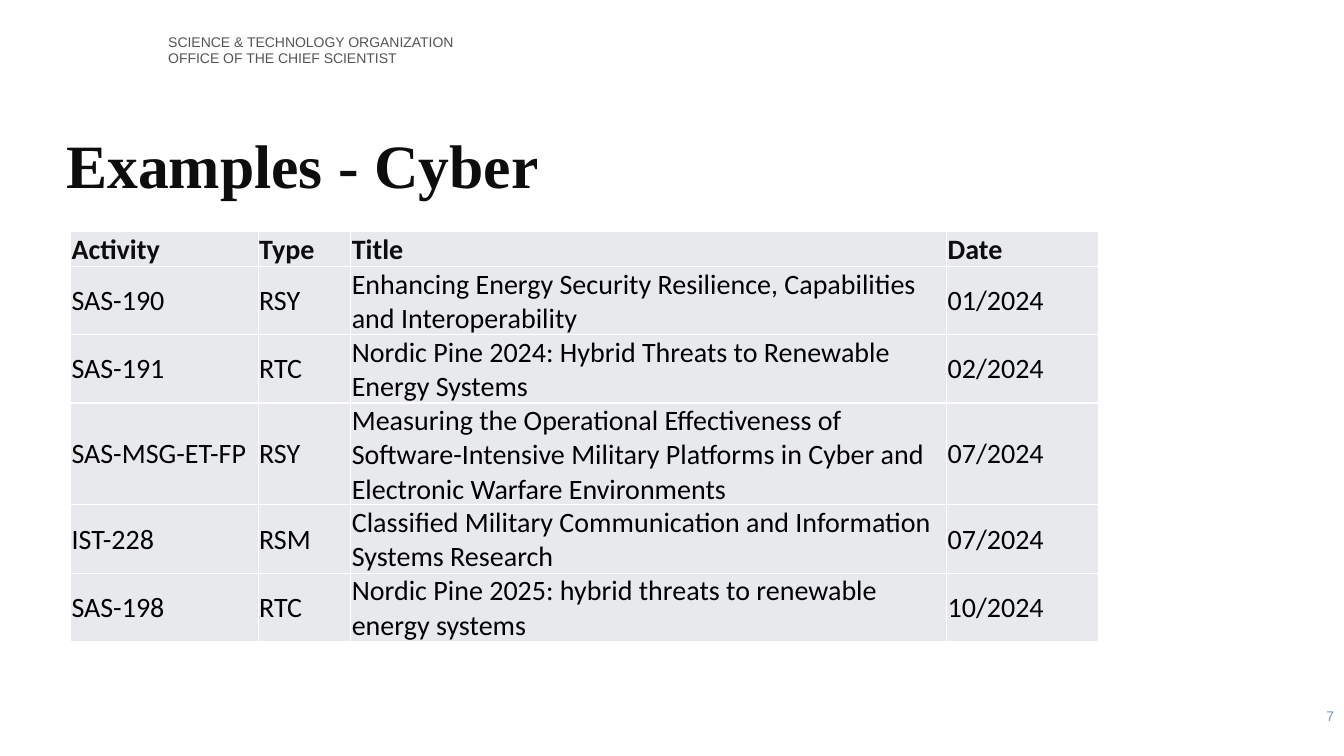
from dataclasses import dataclass

from lxml import etree
from pptx import Presentation, util as u
from pptx.dml.color import RGBColor
from pptx.enum import text
from pptx.oxml import ns

PX = u.Inches(1) // 100


@dataclass(frozen=True)
class Theme:
    ink: str = "0D0D0D"
    body: str = "000000"
    organization: str = "545454"
    page_number: str = "719AC1"
    cell: str = "E7E9ED"
    border: str = "FFFFFF"
    small: int = 10
    table: int = 20
    title: int = 44
    sans: str = "Arial"
    serif: str = "Times New Roman"
    table_font: str = "Calibri"


def write(frame, words, *, font, size, color, bold=False,
          align=text.PP_ALIGN.LEFT, line_spacing=None):
    """Fill a text frame, one paragraph for each line of words."""
    for index, line in enumerate(words.split("\n")):
        paragraph = frame.add_paragraph() if index else frame.paragraphs[0]
        paragraph.alignment = align
        if line_spacing:
            paragraph.line_spacing = line_spacing
        run = paragraph.add_run()
        run.text = line
        run.font.name = font
        run.font.size = u.Pt(size)
        run.font.bold = bold
        run.font.color.rgb = RGBColor.from_string(color)


class SlideBuilder:
    def __init__(self, slide, theme):
        self.slide = slide
        self.theme = theme

    def text_box(self, left, top, width, height, words, **style):
        box = self.slide.shapes.add_textbox(
            left * PX, top * PX, width * PX, height * PX)
        box.text_frame.word_wrap = True
        box.text_frame.vertical_anchor = text.MSO_ANCHOR.MIDDLE
        write(box.text_frame, words, **style)

    def table(self, left, top, widths, heights, rows):
        frame = self.slide.shapes.add_table(
            len(rows), len(widths), left * PX, top * PX,
            sum(widths) * PX, sum(heights) * PX)
        table = frame.table
        table.first_row = table.horz_banding = False
        for column, width in zip(table.columns, widths):
            column.width = width * PX
        for index, (row, height, values) in enumerate(
                zip(table.rows, heights, rows)):
            row.height = height * PX
            for cell, value in zip(row.cells, values):
                self.cell(cell, value, header=index == 0)

    def cell(self, cell, value, header):
        theme = self.theme
        cell.margin_left = cell.margin_right = cell.margin_top = PX
        cell.margin_bottom = 0
        cell.vertical_anchor = text.MSO_ANCHOR.MIDDLE
        self.borders(cell)
        cell.fill.solid()
        cell.fill.fore_color.rgb = RGBColor.from_string(theme.cell)
        write(cell.text_frame, value, font=theme.table_font, size=theme.table,
              color=theme.ink if header else theme.body, bold=header)

    def borders(self, cell):
        properties = cell._tc.get_or_add_tcPr()
        for side in ("a:lnL", "a:lnR", "a:lnT", "a:lnB"):
            line = etree.SubElement(properties, ns.qn(side), w=str(u.Pt(1)))
            fill = etree.SubElement(line, ns.qn("a:solidFill"))
            etree.SubElement(fill, ns.qn("a:srgbClr"), val=self.theme.border)


ACTIVITIES = [
    ("Activity", "Type", "Title", "Date"),
    ("SAS-190", "RSY",
     "Enhancing Energy Security Resilience, Capabilities and Interoperability",
     "01/2024"),
    ("SAS-191", "RTC",
     "Nordic Pine 2024: Hybrid Threats to Renewable Energy Systems",
     "02/2024"),
    ("SAS-MSG-ET-FP", "RSY",
     "Measuring the Operational Effectiveness of Software-Intensive Military "
     "Platforms in Cyber and Electronic Warfare Environments",
     "07/2024"),
    ("IST-228", "RSM",
     "Classified Military Communication and Information Systems Research",
     "07/2024"),
    ("SAS-198", "RTC",
     "Nordic Pine 2025: hybrid threats to renewable energy systems",
     "10/2024"),
]


def main():
    presentation = Presentation()
    presentation.slide_width = 1333 * PX
    presentation.slide_height = 750 * PX
    theme = Theme()
    slide = presentation.slides.add_slide(presentation.slide_layouts[6])
    builder = SlideBuilder(slide, theme)

    builder.text_box(
        157, 20, 591, 59,
        "SCIENCE & TECHNOLOGY ORGANIZATION\nOFFICE OF THE CHIEF SCIENTIST",
        font=theme.sans, size=theme.small, color=theme.organization)
    builder.text_box(
        56, 122, 1150, 91, "Examples - Cyber", font=theme.serif,
        size=theme.title, color=theme.ink, bold=True, line_spacing=0.9)
    builder.table(70, 230, [186, 92, 591, 151],
                  [33] + [66] * (len(ACTIVITIES) - 1), ACTIVITIES)
    builder.text_box(
        1033, 690, 300, 40, "7", font=theme.sans, size=theme.small,
        color=theme.page_number, align=text.PP_ALIGN.RIGHT)

    presentation.save("out.pptx")


if __name__ == "__main__":
    main()
